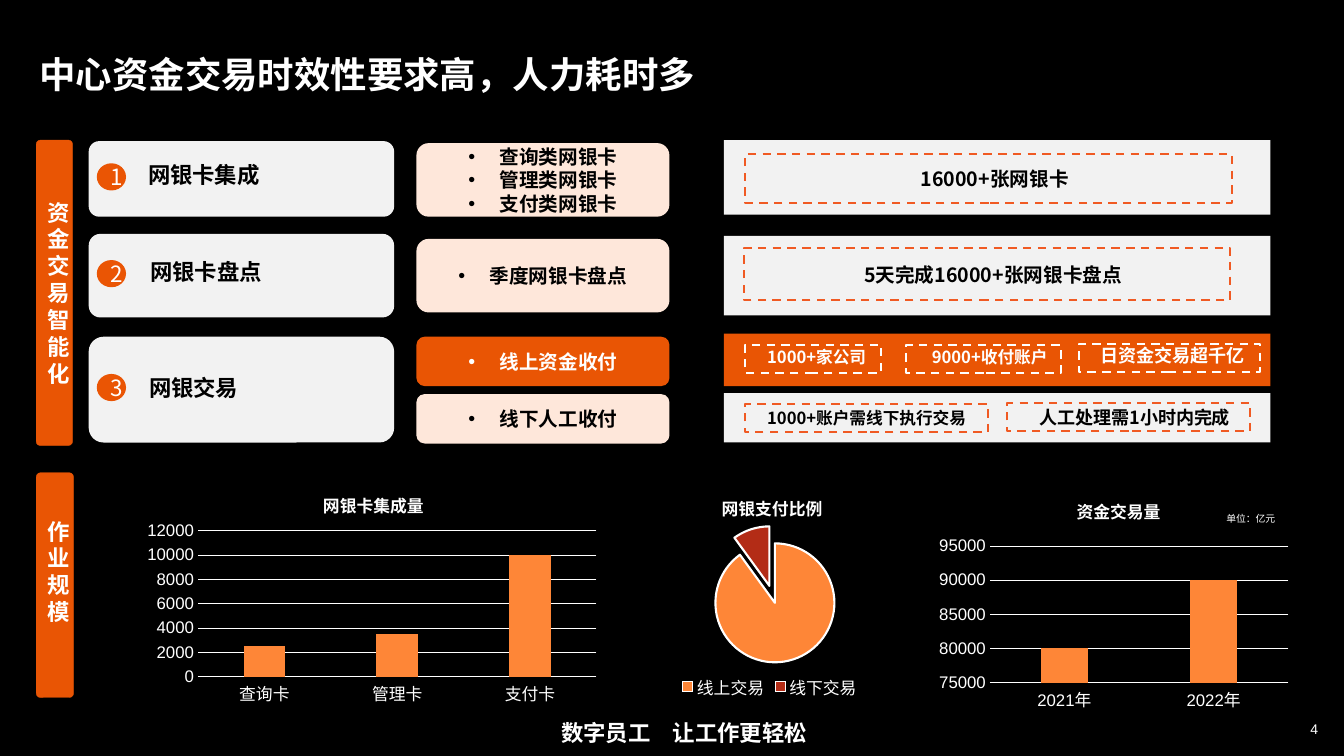
import pptx
import pptx.chart.data
import pptx.dml.color
import pptx.enum.chart
import pptx.enum.dml
import pptx.enum.shapes
import pptx.enum.text
import pptx.oxml
import pptx.oxml.ns
import pptx.util

Inches, Pt = pptx.util.Inches, pptx.util.Pt
SHAPE = pptx.enum.shapes.MSO_SHAPE
ALIGN = pptx.enum.text.PP_ALIGN
ANCHOR = pptx.enum.text.MSO_ANCHOR
KIND = pptx.enum.chart.XL_CHART_TYPE
CJK = "Noto Sans CJK SC"
COLORS = {
    "black": "000000", "white": "FFFFFF", "grey": "F2F2F2", "orange": "E95504",
    "badge": "EA5504", "peach": "FEE7DA", "dash": "F05A23", "bar": "FE8637", "red": "B32C16",
}


def color(name):
    return pptx.dml.color.RGBColor.from_string(COLORS[name])


def paint(fill, name):
    if name is None:
        fill.background()
    else:
        fill.solid()
        fill.fore_color.rgb = color(name)


def manual_layout(x, y, w=None, h=None):
    """Chart layout element in fractions of the chart; a size makes it the inner plot area."""
    parts = [("xMode", "edge"), ("yMode", "edge"), ("x", x), ("y", y)]
    if w is not None:
        parts = [("layoutTarget", "inner")] + parts + [("w", w), ("h", h)]
    body = "".join(f'<c:{tag} val="{value}"/>' for tag, value in parts)
    return pptx.oxml.parse_xml(
        f'<c:layout {pptx.oxml.ns.nsdecls("c")}><c:manualLayout>{body}</c:manualLayout></c:layout>')


def set_layout(parent, layout, index):
    for old in parent.findall(pptx.oxml.ns.qn("c:layout")):
        parent.remove(old)
    parent.insert(index, layout)


class Deck:
    def __init__(self):
        self.prs = pptx.Presentation()
        self.prs.slide_width, self.prs.slide_height = Inches(13.33), Inches(7.5)
        self.slide = self.prs.slides.add_slide(self.prs.slide_layouts[5])
        paint(self.slide.background.fill, "black")

    def set_lines(self, frame, lines, size, ink="black", bold=True, font=CJK, align=ALIGN.CENTER,
                  anchor=ANCHOR.MIDDLE, left=0, bullet=False, spacing=None, insets=None):
        frame.word_wrap = True
        frame.auto_size = pptx.enum.text.MSO_AUTO_SIZE.NONE
        frame.vertical_anchor = anchor
        if insets is not None:
            (frame.margin_left, frame.margin_top,
             frame.margin_right, frame.margin_bottom) = map(Inches, insets)
        for number, line in enumerate(lines):
            para = frame.add_paragraph() if number else frame.paragraphs[0]
            para.alignment = align
            if spacing:
                para.line_spacing = spacing
            props = para._p.get_or_add_pPr()
            if left:
                props.set("marL", str(Inches(left)))
                props.set("indent", str(-Inches(left) if bullet else 0))
            if bullet:
                for xml in ('<a:buFont {} typeface="Arial"/>', '<a:buChar {} char="•"/>'):
                    props.append(pptx.oxml.parse_xml(xml.format(pptx.oxml.ns.nsdecls("a"))))
            run = para.add_run()
            run.text = line
            run.font.size, run.font.bold, run.font.name = Pt(size), bold, font
            run.font.color.rgb = color(ink)
            run.font._element.find(pptx.oxml.ns.qn("a:latin")).addnext(pptx.oxml.parse_xml(
                f'<a:ea {pptx.oxml.ns.nsdecls("a")} typeface="{CJK}"/>'))

    def title(self, box, line):
        holder = self.slide.shapes.title
        holder.left, holder.top, holder.width, holder.height = map(Inches, box)
        self.set_lines(holder.text_frame, [line], 26, "white", font="Arial", align=ALIGN.LEFT,
                       anchor=ANCHOR.TOP, insets=(0, 0, 0, 0))

    def text(self, box, line, size, **style):
        label = self.slide.shapes.add_textbox(*map(Inches, box))
        self.set_lines(label.text_frame, [line], size, **style)

    def shape(self, kind, box, fill=None, line=None, width=1.5, dashed=False, round_by=None):
        item = self.slide.shapes.add_shape(kind, *map(Inches, box))
        item.shadow.inherit = False
        paint(item.fill, fill)
        paint(item.line.fill, line)
        if line:
            item.line.width = Pt(width)
        if dashed:
            item.line.dash_style = pptx.enum.dml.MSO_LINE.DASH
        if round_by:
            item.adjustments[0] = round_by
        return item

    def band(self, box, line, insets=None):
        """Side label whose narrow width stacks the characters."""
        item = self.shape(SHAPE.ROUNDED_RECTANGLE, box, "orange", "badge", 0.25, round_by=0.11)
        self.set_lines(item.text_frame, [line], 16, "white", insets=insets)

    def step(self, number, top, height, name, name_at, badge_top):
        self.shape(SHAPE.ROUNDED_RECTANGLE, (0.88, top, 3.03, height), "grey", round_by=0.14)
        badge = self.shape(SHAPE.OVAL, (0.96, badge_top, 0.29, 0.27), "badge")
        self.set_lines(badge.text_frame, [str(number)], 16, "white", bold=False)
        self.text((*name_at, 2.83, 0.6), name, 16, font="Arial", align=ALIGN.LEFT,
                  anchor=ANCHOR.TOP, left=0.12)

    def tasks(self, top, height, lines, fill="peach", ink="black"):
        item = self.shape(SHAPE.ROUNDED_RECTANGLE, (4.13, top, 2.51, height), fill)
        self.set_lines(item.text_frame, lines, 14, ink, left=0.31, bullet=True)

    def panel(self, top, height, fill="grey"):
        self.shape(SHAPE.RECTANGLE, (7.18, top, 5.42, height), fill)

    def fact(self, box, line, size, edge="dash", **style):
        item = self.shape(SHAPE.RECTANGLE, box, line=edge, dashed=True)
        self.set_lines(item.text_frame, [line], size, left=0.12, **style)

    def chart(self, kind, box, heading, values, heading_at, plot):
        data = pptx.chart.data.CategoryChartData()
        data.categories = list(values)
        data.add_series(heading, list(values.values()))
        chart = self.slide.shapes.add_chart(kind, *map(Inches, box), data).chart
        chart.font.size, chart.font.name = Pt(12), "Arial"
        chart.font.color.rgb = color("white")
        chart.has_title = True
        self.set_lines(chart.chart_title.text_frame, [heading], 12, "white", font="Arial")
        chart.chart_title.include_in_layout = False
        set_layout(chart.chart_title._element, manual_layout(*heading_at), 1)
        set_layout(chart._chartSpace.chart.plotArea, manual_layout(*plot), 0)
        chart.has_legend = False
        return chart

    def columns(self, box, heading, values, heading_at, plot, scale):
        chart = self.chart(KIND.COLUMN_CLUSTERED, box, heading, values, heading_at, plot)
        bars = chart.plots[0]
        bars.gap_width, bars.overlap, bars.vary_by_categories = 219, -27, False
        paint(bars.series[0].format.fill, "bar")
        amounts = chart.value_axis
        amounts.minimum_scale, amounts.maximum_scale, amounts.major_unit = scale
        amounts.tick_labels.number_format = "General"
        amounts.tick_labels.number_format_is_linked = False
        amounts.format.line.fill.background()
        for axis in (amounts, chart.category_axis):
            axis.major_tick_mark = pptx.enum.chart.XL_TICK_MARK.NONE
        for rule in (amounts.major_gridlines.format.line, chart.category_axis.format.line):
            paint(rule.fill, "white")
            rule.width = Pt(0.75)

    def pie(self, box, heading, values, heading_at, plot, fills):
        chart = self.chart(KIND.PIE, box, heading, values, heading_at, plot)
        chart.has_legend = True
        chart.legend.position = pptx.enum.chart.XL_LEGEND_POSITION.BOTTOM
        chart.legend.include_in_layout = False
        shares = chart.plots[0].series[0]
        for number, fill in enumerate(fills):
            style = shares.points[number].format
            paint(style.fill, fill)
            paint(style.line.fill, "white")
            style.line.width = Pt(1.5)
        last = shares._element.findall(pptx.oxml.ns.qn("c:dPt"))[-1]
        last.find(pptx.oxml.ns.qn("c:spPr")).addprevious(pptx.oxml.parse_xml(
            f'<c:explosion {pptx.oxml.ns.nsdecls("c")} val="30"/>'))


def main():
    deck = Deck()
    deck.title((0.39, 0.52, 12.55, 0.61), "中心资金交易时效性要求高，人力耗时多")
    deck.band((0.36, 1.39, 0.36, 3.03), "资金交易智能化")
    deck.band((0.36, 4.69, 0.37, 2.23), "作业规模", insets=(0.1, 0.05, 0.1, 0.32))

    deck.step(1, 1.4, 0.75, "网银卡集成", (1.25, 1.55), 1.62)
    deck.step(2, 2.32, 0.83, "网银卡盘点", (1.27, 2.51), 2.58)
    deck.step(3, 3.34, 1.05, "网银交易", (1.26, 3.66), 3.71)

    deck.tasks(1.42, 0.73, ["查询类网银卡", "管理类网银卡", "支付类网银卡"])
    deck.tasks(2.37, 0.73, ["季度网银卡盘点"])
    deck.tasks(3.34, 0.49, ["线上资金收付"], "orange", "white")
    deck.tasks(3.91, 0.49, ["线下人工收付"])

    for top, height, fill in ((1.39, 0.74, "grey"), (2.34, 0.79, "grey"),
                              (3.31, 0.52, "orange"), (3.9, 0.49, "grey")):
        deck.panel(top, height, fill)
    deck.fact((7.39, 1.53, 4.83, 0.48), "16000+张网银卡", 14)
    deck.fact((7.38, 2.46, 4.82, 0.52), "5天完成16000+张网银卡盘点", 14)
    for left, top, width, line, size, align in (
            (7.39, 3.42, 1.35, "1000+家公司", 11.9, ALIGN.LEFT),
            (8.99, 3.42, 1.53, "9000+收付账户", 11.9, ALIGN.CENTER),
            (10.7, 3.41, 1.8, "日资金交易超千亿", 12.9, ALIGN.LEFT)):
        deck.fact((left, top, width, 0.28), line, size, "white", ink="white",
                  align=align, spacing=0.8)
    deck.fact((7.39, 4.01, 2.41, 0.28), "1000+账户需线下执行交易", 11.9, align=ALIGN.LEFT)
    deck.fact((9.99, 4, 2.41, 0.28), "人工处理需1小时内完成", 12.9)

    deck.columns((1.36, 4.67, 4.65, 2.38), "网银卡集成量",
                 {"查询卡": 2500, "管理卡": 3500, "支付卡": 10000},
                 (0.39, 0.07), (0.13, 0.25, 0.85, 0.61), (0, 12000, 2000))
    deck.pie((5.94, 4.71, 3.39, 2.27), "网银支付比例", {"线上交易": 90, "线下交易": 10},
             (0.35, 0.07), (0.34, 0.3, 0.35, 0.52), ("bar", "red"))
    deck.columns((9.24, 4.83, 3.61, 2.26), "资金交易量", {"2021年": 80000, "2022年": 90000},
                 (0.39, 0.03), (0.16, 0.26, 0.82, 0.6), (75000, 95000, 5000))
    flush = {"ink": "white", "insets": (0, 0, 0, 0)}
    deck.text((12.06, 4.99, 0.69, 0.3), "单位：亿元", 7, bold=False, font="Arial", **flush)
    deck.text((4.99, 7.13, 3.59, 0.29), "数字员工　让工作更轻松", 16, anchor=ANCHOR.TOP, **flush)
    deck.text((12.77, 7, 0.53, 0.46), "4", 10, bold=False, font="Arial", **flush)
    deck.prs.save("out.pptx")


if __name__ == "__main__":
    main()
